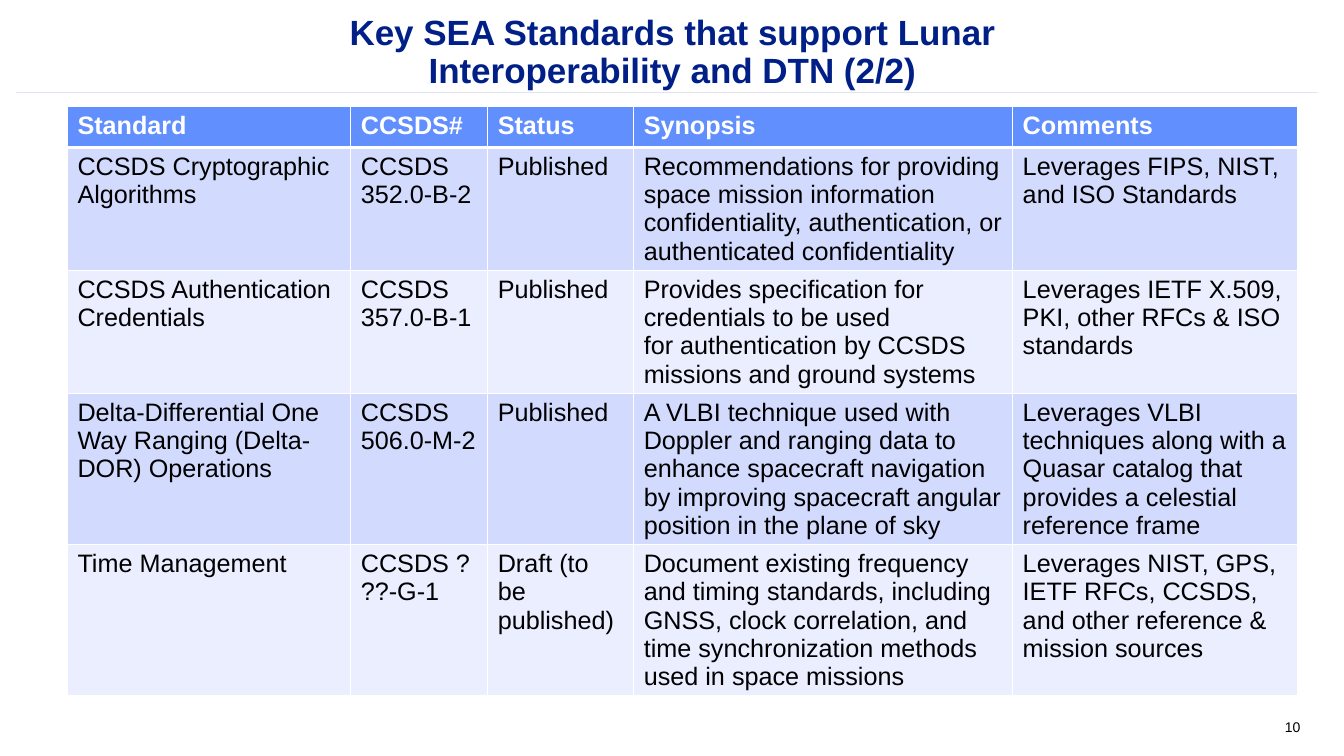
from dataclasses import dataclass

from lxml.etree import SubElement
from pptx import Presentation
from pptx.dml.color import RGBColor
from pptx.enum.shapes import MSO_CONNECTOR
from pptx.enum.text import MSO_ANCHOR, MSO_AUTO_SIZE, PP_ALIGN
from pptx.oxml.ns import qn
from pptx.util import Cm, Pt

TITLE_LINES = ["Key SEA Standards that support Lunar", "Interoperability and DTN (2/2)"]
PAGE_NUMBER = "10"
HEADINGS = ("Standard", "CCSDS#", "Status", "Synopsis", "Comments")
STANDARDS = [
    ("CCSDS Cryptographic Algorithms", "CCSDS 352.0-B-2", "Published",
     "Recommendations for providing space mission information confidentiality, "
     "authentication, or\nauthenticated confidentiality",
     "Leverages FIPS, NIST, and ISO Standards"),
    ("CCSDS Authentication Credentials", "CCSDS 357.0-B-1", "Published",
     "Provides specification for credentials to be used\n"
     "for authentication by CCSDS missions and ground systems",
     "Leverages IETF X.509, PKI, other RFCs & ISO standards"),
    ("Delta-Differential One Way Ranging (Delta-DOR) Operations", "CCSDS 506.0-M-2",
     "Published",
     "A VLBI technique used with Doppler and ranging data to enhance spacecraft "
     "navigation by improving spacecraft angular position in the plane of sky",
     "Leverages VLBI techniques along with a Quasar catalog that provides a "
     "celestial reference frame"),
    ("Time Management", "CCSDS ???-G-1", "Draft (to be published)",
     "Document existing frequency and timing standards, including GNSS, clock "
     "correlation, and time synchronization methods used in space missions",
     "Leverages NIST, GPS, IETF RFCs, CCSDS, and other reference & mission sources"),
]
COLUMN_WIDTHS = (7.14, 3.45, 3.68, 9.55, 7.19)
MINIMUM_ROW_HEIGHT = 1.03
TABLE_HEIGHT = 15.77


@dataclass(frozen=True)
class Theme:
    font: str = "Arial"
    title: str = "012087"
    rule: str = "333399"
    rule_opacity: int = 40
    text: str = "000000"
    light: str = "FFFFFF"
    header: str = "618FFD"
    bands: tuple = ("D2DBFE", "EAEEFF")
    title_size: int = 25
    table_size: int = 18
    number_size: int = 10


THEME = Theme()


def format_font(font, size, color, bold=False):
    for name, value in {"name": THEME.font, "size": Pt(size), "bold": bold}.items():
        setattr(font, name, value)
    font.color.rgb = RGBColor.from_string(color)


def add_title(page):
    title = page.shapes.title
    box = {"left": Cm(1.7), "top": Cm(0.25), "width": Cm(30.48), "height": Cm(1.57)}
    for name, value in box.items():
        setattr(title, name, value)
    frame = title.text_frame
    settings = {"word_wrap": True, "auto_size": MSO_AUTO_SIZE.NONE,
                "vertical_anchor": MSO_ANCHOR.TOP,
                "margin_top": Cm(0.13), "margin_bottom": 0}
    for name, value in settings.items():
        setattr(frame, name, value)
    para = frame.paragraphs[0]
    para.alignment = PP_ALIGN.CENTER
    para.line_spacing = 0.9
    for index, line in enumerate(TITLE_LINES):
        if index:
            para.add_line_break()
        span = para.add_run()
        span.text = line
        format_font(span.font, THEME.title_size, THEME.title, bold=True)


def add_rule(page):
    rule = page.shapes.add_connector(
        MSO_CONNECTOR.STRAIGHT, Cm(0.41), Cm(2.33), Cm(33.2), Cm(2.33))
    rule.line.color.rgb = RGBColor.from_string(THEME.rule)
    rule.line.width = Pt(0.13)
    properties = rule._element.spPr
    color = properties.find(".//" + qn("a:srgbClr"))
    SubElement(color, qn("a:alpha"), val=str(THEME.rule_opacity * 1000))
    SubElement(properties, qn("a:effectLst"))


def add_borders(cell, bottom_width):
    """Draw light borders; call before filling, as the schema puts lines first."""
    properties = cell._tc.get_or_add_tcPr()
    widths = {"a:lnL": 1, "a:lnR": 1, "a:lnT": 1, "a:lnB": bottom_width}
    for tag, width in widths.items():
        line = SubElement(properties, qn(tag), w=str(Pt(width)))
        fill = SubElement(line, qn("a:solidFill"))
        SubElement(fill, qn("a:srgbClr"), val=THEME.light)


def add_standards_table(page):
    """Give every row the same minimum height, so that its text sets the real one."""
    rows = [HEADINGS, *STANDARDS]
    holder = page.shapes.add_table(
        len(rows), len(HEADINGS), Cm(1.7), Cm(2.69),
        Cm(sum(COLUMN_WIDTHS)), Cm(TABLE_HEIGHT))
    table = holder.table
    for column, width in zip(table.columns, COLUMN_WIDTHS):
        column.width = Cm(width)
    for index, (row, texts) in enumerate(zip(table.rows, rows)):
        row.height = Cm(MINIMUM_ROW_HEIGHT)
        is_header = index == 0
        background = THEME.header if is_header else THEME.bands[(index - 1) % 2]
        color = THEME.light if is_header else THEME.text
        for cell, text in zip(row.cells, texts):
            add_borders(cell, 3 if is_header else 1)
            cell.fill.solid()
            cell.fill.fore_color.rgb = RGBColor.from_string(background)
            cell.text = text
            for para in cell.text_frame.paragraphs:
                format_font(para.runs[0].font, THEME.table_size, color, is_header)
    holder.height = Cm(TABLE_HEIGHT)


def add_page_number(page):
    box = page.shapes.add_textbox(Cm(25.12), Cm(17.98), Cm(7.9), Cm(0.64))
    frame = box.text_frame
    frame.word_wrap = True
    frame.text = PAGE_NUMBER
    para = frame.paragraphs[0]
    para.alignment = PP_ALIGN.RIGHT
    format_font(para.runs[0].font, THEME.number_size, THEME.text)


def main():
    deck = Presentation()
    deck.slide_width, deck.slide_height = Cm(33.87), Cm(19.05)
    page = deck.slides.add_slide(deck.slide_layouts[5])
    add_rule(page)
    add_title(page)
    add_standards_table(page)
    add_page_number(page)
    deck.save("out.pptx")


if __name__ == "__main__":
    main()
